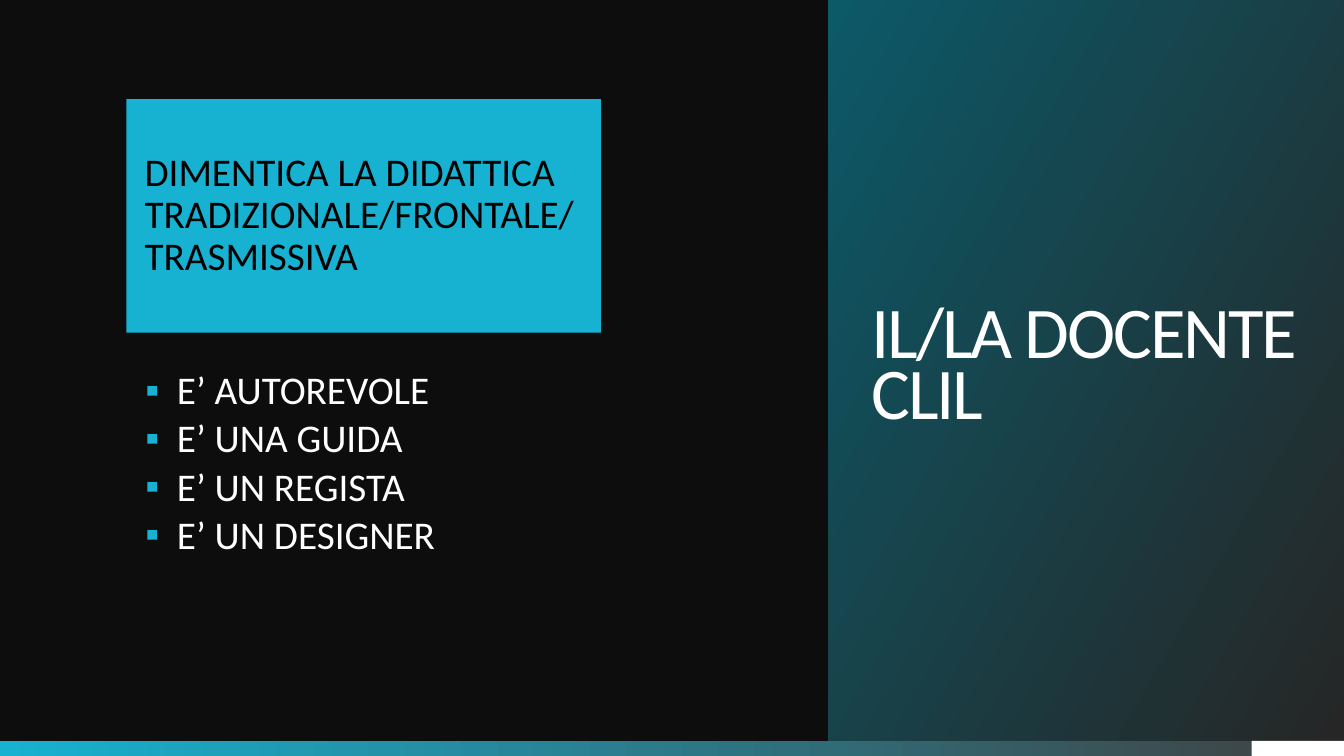
import dataclasses

import pptx
import pptx.dml.color
import pptx.enum.shapes
import pptx.enum.text
import pptx.oxml
import pptx.oxml.ns
import pptx.util
import pptx.shapes.autoshape
import pptx.text.text

Pt = pptx.util.Pt
RECTANGLE = pptx.enum.shapes.MSO_SHAPE.RECTANGLE
MIDDLE = pptx.enum.text.MSO_ANCHOR.MIDDLE
TOP = pptx.enum.text.MSO_ANCHOR.TOP

COLORS = {
    "background": "0D0D0D",
    "accent": "17B2D1",
    "strip_end": "404040",
    "panel_dark": "262626",
    "panel_teal": "0C5968",
    "white": "FFFFFF",
    "black": "000000",
}
SLIDE_WIDTH, SLIDE_HEIGHT = 960, 540
STRIP_HEIGHT = 10.8
STRIP_TOP = SLIDE_HEIGHT - STRIP_HEIGHT
PANEL_LEFT = 591.6
PAGE_MARK_LEFT = 894
BULLET_INDENT = 22.5
QUALITIES = ["E’ AUTOREVOLE", "E’ UNA GUIDA", "E’ UN REGISTA", "E’ UN DESIGNER"]


@dataclasses.dataclass(frozen=True)
class Box:
    left: float
    top: float
    width: float
    height: float

    def lengths(self) -> list[pptx.util.Length]:
        """Return left, top, width and height as lengths."""
        return [Pt(value) for value in dataclasses.astuple(self)]


@dataclasses.dataclass(frozen=True)
class Block:
    box: Box
    colors: tuple[str, ...]


STRIP = Block(Box(0, STRIP_TOP, SLIDE_WIDTH, STRIP_HEIGHT), ("accent", "strip_end"))
PAGE_MARK = Block(
    Box(PAGE_MARK_LEFT, STRIP_TOP, SLIDE_WIDTH - PAGE_MARK_LEFT, STRIP_HEIGHT), ("white",)
)
WARNING = Block(Box(90.3, 70.8, 339, 166.8), ("accent",))
TITLE_PANEL = Block(
    Box(PANEL_LEFT, 0, SLIDE_WIDTH - PANEL_LEFT, STRIP_TOP), ("panel_dark", "panel_teal")
)
QUALITIES_BOX = Box(66.3, 159.8, 484.6, 301.7)


def rgb(name: str) -> pptx.dml.color.RGBColor:
    """Return the named colour."""
    return pptx.dml.color.RGBColor.from_string(COLORS[name])


def paint(shape: pptx.shapes.autoshape.Shape, names: tuple[str, ...], angle: float = 0) -> None:
    """Fill with one colour or a two-colour gradient, without outline."""
    if len(names) == 1:
        shape.fill.solid()
        shape.fill.fore_color.rgb = rgb(names[0])
    else:
        shape.fill.gradient()
        shape.fill.gradient_angle = angle
        for stop, name in zip(shape.fill.gradient_stops, names):
            stop.color.rgb = rgb(name)
    shape.line.fill.background()


def draw_block(slide: pptx.slide.Slide, block: Block) -> pptx.shapes.autoshape.Shape:
    """Draw a filled rectangle."""
    rectangle = slide.shapes.add_shape(RECTANGLE, *block.box.lengths())
    rectangle.shadow.inherit = False
    paint(rectangle, block.colors)
    return rectangle


def add_bullet(paragraph: pptx.text.text._Paragraph) -> None:
    """Give a paragraph a hanging square bullet."""
    paragraph.level = 1
    properties = paragraph._p.get_or_add_pPr()
    properties.set("marL", str(Pt(BULLET_INDENT)))
    properties.set("indent", str(-Pt(BULLET_INDENT)))
    namespace = pptx.oxml.ns.nsdecls("a")
    for xml in (
        f'<a:buClr {namespace}><a:srgbClr val="{COLORS["accent"]}"/></a:buClr>',
        f'<a:buFont {namespace} typeface="Arial"/>',
        f'<a:buChar {namespace} char="▪"/>',
    ):
        properties.append(pptx.oxml.parse_xml(xml))


def write(
    shape: pptx.shapes.autoshape.Shape,
    lines: list[str],
    *,
    color: str,
    insets: tuple[float, float, float, float],
    size: float = 28,
    line_spacing: float = 0.9,
    space_after: float = 0,
    tracking: float = 0,
    anchor: pptx.enum.text.MSO_ANCHOR = MIDDLE,
    bulleted: bool = False,
) -> None:
    """Write formatted paragraphs into a shape."""
    frame = shape.text_frame
    frame.word_wrap = True
    frame.auto_size = pptx.enum.text.MSO_AUTO_SIZE.NONE
    frame.vertical_anchor = anchor
    frame.margin_left, frame.margin_top, frame.margin_right, frame.margin_bottom = map(Pt, insets)
    frame.text = "\n".join(lines)
    for paragraph in frame.paragraphs:
        paragraph.alignment = pptx.enum.text.PP_ALIGN.LEFT
        paragraph.line_spacing = line_spacing
        paragraph.space_after = Pt(space_after)
        if bulleted:
            add_bullet(paragraph)
        for run in paragraph.runs:
            run.font.name = "Calibri"
            run.font.size = Pt(size)
            run.font.color.rgb = rgb(color)
            if tracking:
                run._r.get_or_add_rPr().set("spc", str(round(tracking * 100)))


def main() -> None:
    """Build and save the slide about the CLIL teacher."""
    presentation = pptx.Presentation()
    presentation.slide_width = Pt(SLIDE_WIDTH)
    presentation.slide_height = Pt(SLIDE_HEIGHT)
    slide = presentation.slides.add_slide(presentation.slide_layouts.get_by_name("Title Only"))
    slide.background.fill.solid()
    slide.background.fill.fore_color.rgb = rgb("background")

    title = slide.shapes.title
    title.left, title.top, title.width, title.height = TITLE_PANEL.box.lengths()
    paint(title, TITLE_PANEL.colors, angle=150)
    write(title, ["IL/LA DOCENTE CLIL"], color="white", insets=(31, 3.6, 31, 3.6),
          size=52, line_spacing=0.7, tracking=-1.5)

    draw_block(slide, STRIP)
    draw_block(slide, PAGE_MARK)

    qualities = slide.shapes.add_textbox(*QUALITIES_BOX.lengths())
    write(qualities, QUALITIES, color="white", insets=(37.6, 105, 37.6, 15.8),
          space_after=4.2, anchor=TOP, bulleted=True)

    warning = draw_block(slide, WARNING)
    write(warning, ["DIMENTICA LA DIDATTICA TRADIZIONALE/FRONTALE/TRASMISSIVA"],
          color="black", insets=(13, 0, 13, 0), space_after=9.8)

    presentation.save("out.pptx")


if __name__ == "__main__":
    main()
